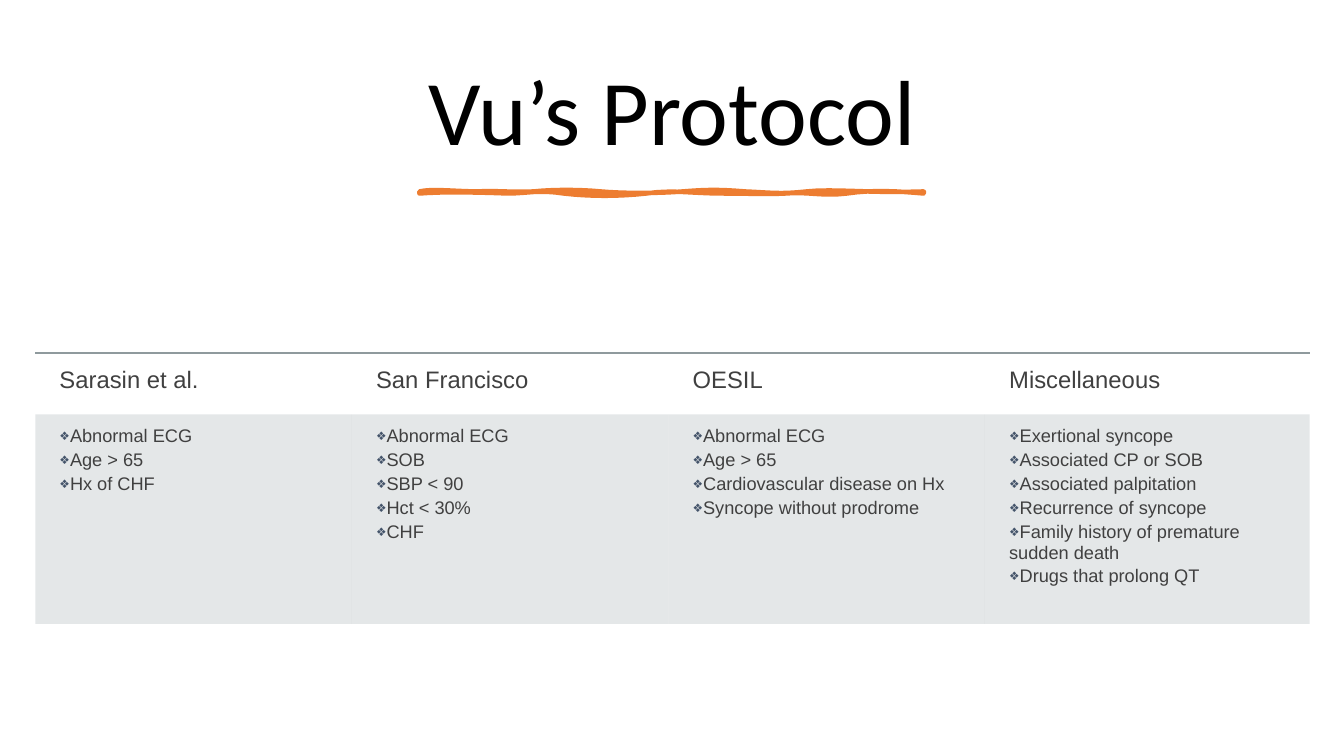
import lxml.etree
import pptx
import pptx.dml.color
import pptx.enum.text
import pptx.oxml.ns
import pptx.util

PX = 9144
COLUMNS = {
    "Sarasin et al.": ["Abnormal ECG", "Age > 65", "Hx of CHF"],
    "San Francisco": ["Abnormal ECG", "SOB", "SBP < 90", "Hct < 30%", "CHF"],
    "OESIL": ["Abnormal ECG", "Age > 65", "Cardiovascular disease on Hx",
              "Syncope without prodrome"],
    "Miscellaneous": ["Exertional syncope", "Associated CP or SOB",
                      "Associated palpitation", "Recurrence of syncope",
                      "Family history of premature sudden death",
                      "Drugs that prolong QT"],
}
BRUSH_START = (416, 190)
BRUSH_CURVES = [
    ((428, 187), (454, 190), (473, 190)), ((492, 189), (509, 191), (529, 190)),
    ((549, 188), (574, 188), (596, 190)), ((617, 192), (653, 192), (677, 190)),
    ((702, 188), (714, 188), (739, 190)), ((763, 191), (774, 193), (800, 190)),
    ((826, 187), (867, 192), (916, 190)), ((917, 191), (916, 191), (916, 192)),
    ((895, 190), (865, 188), (840, 192)), ((815, 195), (801, 190), (779, 192)),
    ((756, 193), (747, 192), (717, 192)), ((687, 192), (667, 188), (641, 192)),
    ((614, 195), (585, 195), (559, 192)), ((534, 188), (523, 192), (503, 192)),
    ((483, 191), (438, 190), (416, 192)), ((416, 191), (416, 190), (416, 190)),
]


def color(value):
    """Turn a hex string into a colour."""
    return pptx.dml.color.RGBColor.from_string(value)


def add_xml(parent, tag, **attributes):
    """Append a drawing element to a parent."""
    return lxml.etree.SubElement(parent, pptx.oxml.ns.qn(tag), attributes)


def set_font(paragraph, name, size, value):
    """Format a whole paragraph."""
    paragraph.font.name = name
    paragraph.font.size = pptx.util.Pt(size)
    paragraph.font.color.rgb = color(value)


def place(shape, left, top, width, height):
    """Position a shape in px."""
    shape.left, shape.top = left * PX, top * PX
    shape.width, shape.height = width * PX, height * PX


def add_title(slide, text):
    """Fill and format the title placeholder."""
    title = slide.shapes.title
    place(title, 70, 46, 1193, 137)
    frame = title.text_frame
    frame.text = text
    frame.word_wrap = True
    frame.vertical_anchor = pptx.enum.text.MSO_ANCHOR.MIDDLE
    paragraph = frame.paragraphs[0]
    paragraph.alignment = pptx.enum.text.PP_ALIGN.CENTER
    paragraph.line_spacing = 0.9
    set_font(paragraph, "Calibri", 66, "000000")


def curve_points(start, curves, steps=8):
    """Sample points along joined cubic curves in EMU."""
    points = []
    for first, second, end in curves:
        for step in range(1, steps + 1):
            t = step / steps
            weights = ((1 - t) ** 3, 3 * t * (1 - t) ** 2, 3 * t * t * (1 - t), t ** 3)
            corners = (start, first, second, end)
            points.append(tuple(
                round(PX * sum(w * corner[axis] for w, corner in zip(weights, corners)))
                for axis in (0, 1)))
        start = end
    return points


def add_brush_stroke(slide, value):
    """Draw the wavy stroke under the title."""
    builder = slide.shapes.build_freeform(BRUSH_START[0] * PX, BRUSH_START[1] * PX)
    builder.add_line_segments(curve_points(BRUSH_START, BRUSH_CURVES), close=True)
    stroke = builder.convert_to_shape()
    stroke.shadow.inherit = False
    stroke.fill.solid()
    stroke.fill.fore_color.rgb = color(value)
    stroke.line.color.rgb = color(value)
    stroke.line.width = pptx.util.Pt(3.25)


def add_bullet(paragraph):
    """Give a paragraph a small diamond bullet."""
    properties = paragraph._p.get_or_add_pPr()
    properties.set("marL", "0")
    properties.set("indent", "0")
    add_xml(add_xml(properties, "a:buClr"), "a:srgbClr", val="44546A")
    add_xml(properties, "a:buSzPct", val="65000")
    add_xml(properties, "a:buFont", typeface="Arial")
    add_xml(properties, "a:buChar", char="❖")


def set_borders(cell, top_line):
    """Clear the cell borders, keeping a top line if asked."""
    properties = cell._tc.get_or_add_tcPr()
    for index, side in enumerate("LRTB"):
        line = add_xml(properties, f"a:ln{side}", w="19050")
        properties.insert(index, line)
        if side == "T" and top_line:
            fill = add_xml(line, "a:solidFill")
            add_xml(add_xml(fill, "a:srgbClr", val="8F9A9D"), "a:alpha", val="60000")
        else:
            add_xml(line, "a:noFill")


def fill_cell(cell, lines, size, margin, bulleted):
    """Write lines into a cell and format it."""
    cell.margin_left = 24 * PX
    cell.margin_right = cell.margin_top = cell.margin_bottom = margin * PX
    cell.text = "\n".join(lines)
    for index, paragraph in enumerate(cell.text_frame.paragraphs):
        if bulleted:
            add_bullet(paragraph)
        if index:
            paragraph.space_before = pptx.util.Pt(size * 0.2)
        set_font(paragraph, "Arial", size, "404040")
    if bulleted:
        cell.fill.solid()
        cell.fill.fore_color.rgb = color("B4BCBE")
        shade = cell._tc.tcPr.find(".//" + pptx.oxml.ns.qn("a:srgbClr"))
        add_xml(shade, "a:alpha", val="35000")
    else:
        cell.fill.background()
    set_borders(cell, not bulleted)


def add_criteria_table(slide):
    """Add the table of criteria by study."""
    table = slide.shapes.add_table(
        2, len(COLUMNS), 35 * PX, 350 * PX, 1264 * PX, 269 * PX).table
    table.first_row = table.horz_banding = False
    for column, width in zip(table.columns, (314, 314, 314, 322)):
        column.width = width * PX
    for row, height in zip(table.rows, (61, 208)):
        row.height = height * PX
    for index, (heading, criteria) in enumerate(COLUMNS.items()):
        fill_cell(table.cell(0, index), [heading], 17, 14, False)
        fill_cell(table.cell(1, index), criteria, 13, 12, True)


def main():
    """Build and save the slide."""
    presentation = pptx.Presentation()
    presentation.slide_width, presentation.slide_height = 1333 * PX, 750 * PX
    slide = presentation.slides.add_slide(presentation.slide_layouts[5])
    add_title(slide, "Vu’s Protocol")
    add_brush_stroke(slide, "ED7D31")
    add_criteria_table(slide)
    presentation.save("out.pptx")


if __name__ == "__main__":
    main()
